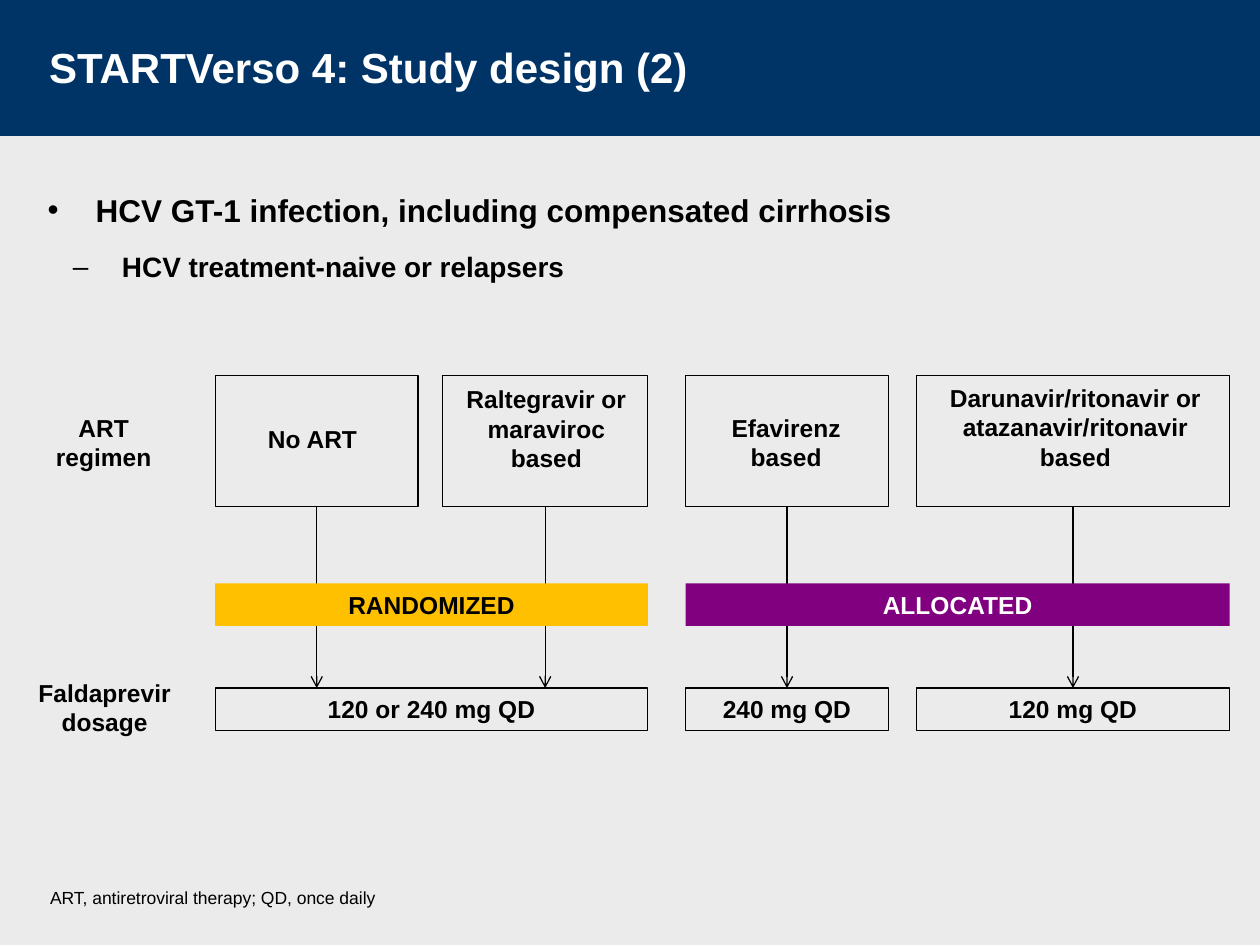
from lxml import etree
from pptx import Presentation
from pptx.dml.color import RGBColor
from pptx.enum.shapes import MSO_CONNECTOR, MSO_SHAPE
from pptx.enum.text import MSO_ANCHOR, PP_ALIGN
from pptx.oxml.ns import qn
from pptx.util import Cm, Pt

RECTANGLE = MSO_SHAPE.RECTANGLE
STRAIGHT = MSO_CONNECTOR.STRAIGHT
LEFT, CENTER = PP_ALIGN.LEFT, PP_ALIGN.CENTER
TOP, MIDDLE = MSO_ANCHOR.TOP, MSO_ANCHOR.MIDDLE

FONT = "Arial"
BLACK, WHITE = "000000", "FFFFFF"
NAVY, GREY, AMBER, PURPLE = "003366", "EBEBEB", "FFC000", "800080"

TITLE = "STARTVerso 4: Study design (2)"
FOOTNOTE = "ART, antiretroviral therapy; QD, once daily"
BULLETS = [
    ("•", "HCV GT-1 infection, including compensated cirrhosis", 18, 0.97, 0.97),
    ("‒", "HCV treatment-naive or relapsers", 16, 1.5, 0.99),
]
COLUMNS = [(4.34, 4.09), (8.92, 4.14), (13.82, 4.09), (18.47, 6.32)]
LABELS = [
    ("No ART", 4.88, 8.43, 2.84, 0.86),
    ("Raltegravir or\nmaraviroc\nbased", 8.97, 7.62, 4.09, 2.06),
    ("Efavirenz\nbased", 14.2, 8.2, 3.3, 1.45),
    ("Darunavir/ritonavir or\natazanavir/ritonavir\vbased", 18.52, 7.59, 6.32, 2.06),
    ("ART regimen", 0.53, 8.2, 3.12, 1.45),
    ("Faldaprevir dosage", 0.46, 13.54, 3.3, 1.45),
]
ASSIGNMENTS = [
    ("RANDOMIZED", 0, 1, AMBER, BLACK),
    ("ALLOCATED", 2, 3, PURPLE, WHITE),
]
DOSES = [("120 or 240 mg QD", 0, 1), ("240 mg QD", 2, 2), ("120 mg QD", 3, 3)]
REGIMEN_TOP, REGIMEN_HEIGHT = 7.57, 2.64
ASSIGNMENT_TOP, DOSE_TOP, BAR_HEIGHT = 11.76, 13.87, 0.86


def color(value):
    return RGBColor.from_string(value)


def style_paragraph(paragraph, size, font_color, bold, align):
    paragraph.alignment = align
    font = paragraph.font
    font.name, font.size, font.bold = FONT, Pt(size), bold
    font.color.rgb = color(font_color)


def write(shape, text, size=14, font_color=BLACK, bold=True, align=CENTER, anchor=TOP):
    frame = shape.text_frame
    frame.word_wrap = True
    frame.vertical_anchor = anchor
    frame.text = text
    for paragraph in frame.paragraphs:
        style_paragraph(paragraph, size, font_color, bold, align)


def add_textbox(slide, left, top, width, height):
    return slide.shapes.add_textbox(Cm(left), Cm(top), Cm(width), Cm(height))


def add_box(slide, left, top, width, height, fill=None):
    shape = slide.shapes.add_shape(RECTANGLE, Cm(left), Cm(top), Cm(width), Cm(height))
    shape.shadow.inherit = False
    if fill:
        shape.fill.solid()
        shape.fill.fore_color.rgb = color(fill)
        shape.line.fill.background()
    else:
        shape.fill.background()
        shape.line.color.rgb = color(BLACK)
        shape.line.width = Pt(0.75)
    return shape


def add_arrow(slide, x, top, bottom):
    arrow = slide.shapes.add_connector(STRAIGHT, Cm(x), Cm(top), Cm(x), Cm(bottom))
    arrow.line.color.rgb = color(BLACK)
    arrow.line.width = Pt(0.75)
    etree.SubElement(arrow.line._get_or_add_ln(), qn("a:tailEnd"), type="arrow")
    etree.SubElement(arrow._element.spPr, qn("a:effectLst"))


def span(first, last):
    left = COLUMNS[first][0]
    return left, sum(COLUMNS[last]) - left


def add_bullets(slide):
    frame = add_textbox(slide, 0.71, 3.73, 23.67, 4.88).text_frame
    frame.word_wrap = True
    for index, (mark, text, size, margin, hanging) in enumerate(BULLETS):
        paragraph = frame.add_paragraph() if index else frame.paragraphs[0]
        paragraph.text = text
        paragraph.space_before = paragraph.space_after = Pt(6)
        properties = paragraph._p.get_or_add_pPr()
        properties.set("marL", str(Cm(margin)))
        properties.set("indent", str(-Cm(hanging)))
        etree.SubElement(properties, qn("a:buFont"), typeface=FONT)
        etree.SubElement(properties, qn("a:buChar"), char=mark)
        style_paragraph(paragraph, size, BLACK, True, LEFT)


def add_header(slide):
    add_box(slide, 0, 0, 25.4, 2.74, NAVY)
    title = add_textbox(slide, 0.99, 0.41, 18.82, 1.88)
    frame = title.text_frame
    frame.margin_left = frame.margin_right = frame.margin_top = frame.margin_bottom = 0
    write(title, TITLE, 24, WHITE, align=LEFT, anchor=MIDDLE)


def add_diagram(slide):
    for left, width in COLUMNS:
        add_arrow(slide, left + width / 2, REGIMEN_TOP + REGIMEN_HEIGHT, DOSE_TOP)
        add_box(slide, left, REGIMEN_TOP, width, REGIMEN_HEIGHT)
    for text, *place in LABELS:
        write(add_textbox(slide, *place), text)
    for text, first, last, fill, font_color in ASSIGNMENTS:
        left, width = span(first, last)
        bar = add_box(slide, left, ASSIGNMENT_TOP, width, BAR_HEIGHT, fill)
        write(bar, text, font_color=font_color)
    for text, first, last in DOSES:
        left, width = span(first, last)
        write(add_box(slide, left, DOSE_TOP, width, BAR_HEIGHT), text)


def main():
    presentation = Presentation()
    presentation.slide_width, presentation.slide_height = Cm(25.4), Cm(19.05)
    slide = presentation.slides.add_slide(presentation.slide_layouts[6])
    slide.background.fill.solid()
    slide.background.fill.fore_color.rgb = color(GREY)
    add_header(slide)
    add_bullets(slide)
    add_diagram(slide)
    write(add_textbox(slide, 0.76, 17.75, 23.55, 0.69), FOOTNOTE, 10, bold=False, align=LEFT)
    presentation.save("out.pptx")


if __name__ == "__main__":
    main()
